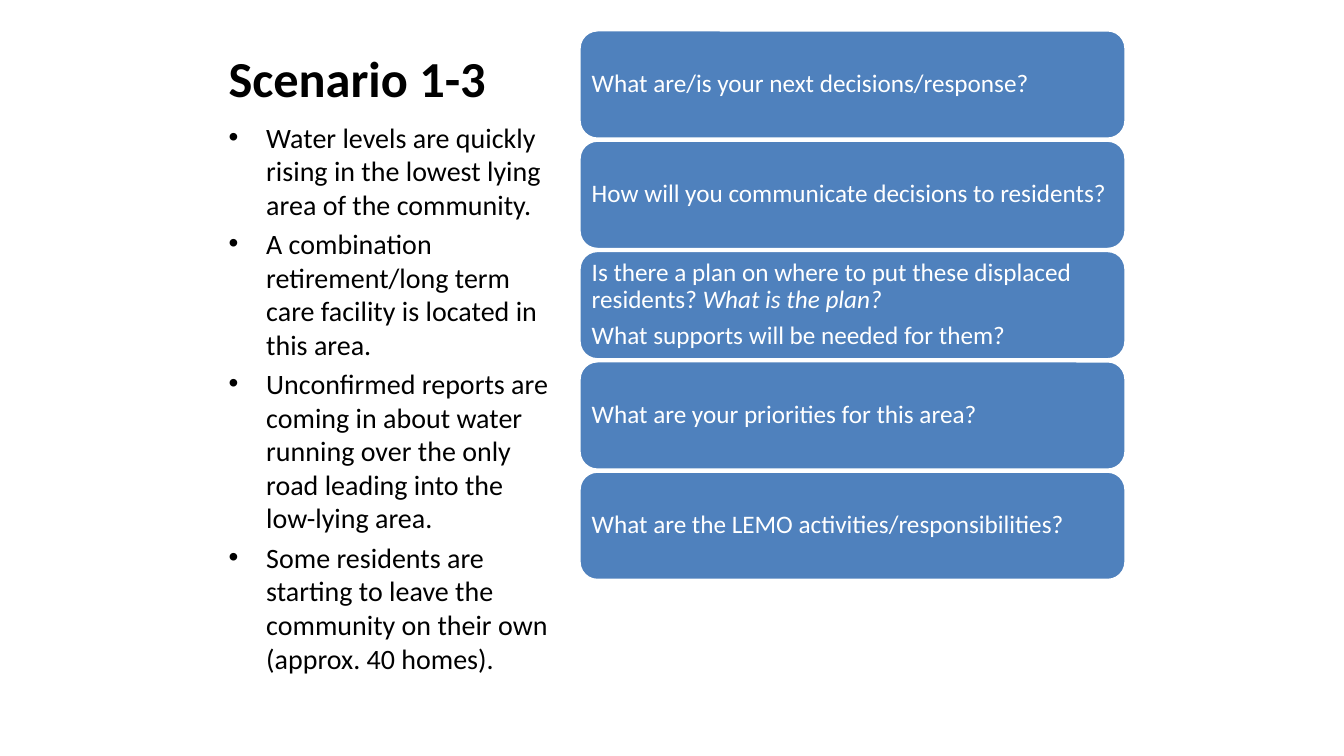
import pptx
import pptx.util
import pptx.dml.color
import pptx.enum.shapes
import pptx.enum.text
import pptx.oxml.ns
import lxml.etree

Cm = pptx.util.Cm
Pt = pptx.util.Pt
qn = pptx.oxml.ns.qn

COLORS = {"ink": "000000", "paper": "FFFFFF", "card": "4F81BD"}

FACTS = [
    "Water levels are quickly rising in the lowest lying area of the community.",
    "A combination retirement/long term care facility is located in this area.",
    "Unconfirmed reports are coming in about water running over the only road "
    "leading into the low-lying area.",
    "Some residents are starting to leave the community on their own "
    "(approx. 40 homes).",
]

# Each card holds paragraphs; each paragraph holds (text, italic) runs.
CARDS = [
    [[("What are/is your next decisions/response?", False)]],
    [[("How will you communicate decisions to residents?", False)]],
    [
        [("Is there a plan on where to put these displaced residents? ", False),
         ("What is the plan?", True)],
        [("What supports will be needed for them?", False)],
    ],
    [[("What are your priorities for this area?", False)]],
    [[("What are the LEMO activities/responsibilities?", False)]],
]


def rgb(name):
    return pptx.dml.color.RGBColor.from_string(COLORS[name])


def apply(target, values):
    for key, value in values.items():
        setattr(target, key, value)


class Deck:
    font = "Calibri"

    def __init__(self):
        self.show = pptx.Presentation()
        self.show.slide_width = Cm(33.87)
        self.show.slide_height = Cm(19.05)
        self.slide = self.show.slides.add_slide(self.show.slide_layouts[6])

    def label(self, para, text, color, **style):
        """Add a styled run to a paragraph."""
        run = para.add_run()
        run.text = text
        apply(run.font, {"name": self.font, **style})
        run.font.color.rgb = rgb(color)

    def frame(self, box, **style):
        """Return the box's text frame, wrapped and formatted."""
        frame = box.text_frame
        apply(frame, {"word_wrap": True, **style})
        return frame

    def paras(self, frame, count):
        """Return the given number of left-aligned paragraphs."""
        for _ in range(count - 1):
            frame.add_paragraph()
        for para in frame.paragraphs:
            para.alignment = pptx.enum.text.PP_ALIGN.LEFT
        return frame.paragraphs

    def title(self, text, *place):
        box = self.slide.shapes.add_textbox(*map(Cm, place))
        frame = self.frame(box, margin_top=Cm(0.43))
        self.label(frame.paragraphs[0], text, "ink", size=Pt(36), bold=True)

    def bullets(self, items, *place):
        frame = self.frame(self.slide.shapes.add_textbox(*map(Cm, place)))
        paras = self.paras(frame, len(items))
        for i, (para, text) in enumerate(zip(paras, items)):
            props = para._p.get_or_add_pPr()
            props.set("marL", str(Cm(0.95)))
            props.set("indent", str(-Cm(0.95)))
            face = lxml.etree.SubElement(props, qn("a:buFont"))
            face.set("typeface", "Arial")
            mark = lxml.etree.SubElement(props, qn("a:buChar"))
            mark.set("char", "•")
            if i:
                para.space_before = Pt(4)
            self.label(para, text, "ink", size=Pt(20))

    def card(self, lines, *place):
        kind = pptx.enum.shapes.MSO_SHAPE.ROUNDED_RECTANGLE
        box = self.slide.shapes.add_shape(kind, *map(Cm, place))
        box.shadow.inherit = False
        box.fill.solid()
        box.fill.fore_color.rgb = rgb("card")
        box.line.color.rgb = rgb("paper")
        box.line.width = Pt(2)
        sides = ("left", "top", "right", "bottom")
        inset = {f"margin_{side}": Cm(0.18) for side in sides}
        middle = pptx.enum.text.MSO_ANCHOR.MIDDLE
        frame = self.frame(box, vertical_anchor=middle, **inset)
        for para, runs in zip(self.paras(frame, len(lines)), lines):
            apply(para, {"line_spacing": 0.9, "space_after": Pt(6.3)})
            for text, slant in runs:
                self.label(para, text, "paper", size=Pt(18), italic=slant)


def main():
    deck = Deck()
    deck.title("Scenario 1-3", 5.51, 0.76, 8.36, 3.23)
    deck.bullets(FACTS, 5.51, 2.9, 8.69, 12.12)
    top, step = 0.76, 2.78
    for i, lines in enumerate(CARDS):
        deck.card(lines, 14.6, top + i * step, 13.77, 2.74)
    deck.show.save("out.pptx")


if __name__ == "__main__":
    main()
